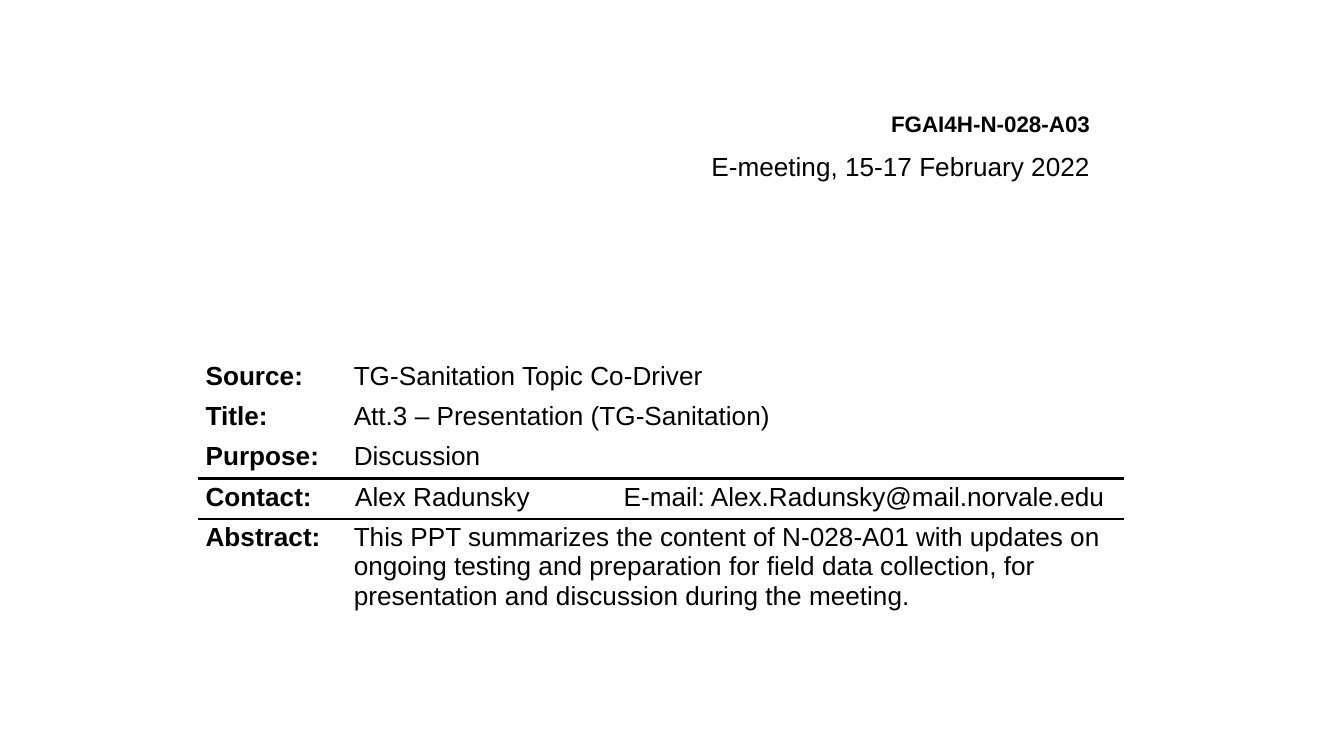
from lxml import etree
from pptx import Presentation
from pptx import util as u
from pptx.dml.color import RGBColor
from pptx.enum import text
from pptx.oxml.ns import qn

WIDTH = 10
HEIGHT = WIDTH * 9 / 16
BLACK = "000000"
FONT = "Arial"
PLAIN_TABLE_STYLE = "{2D5ABB26-0587-4C30-8999-92F81FD0307C}"

DETAILS = [
    ("Source:", "TG-Sanitation Topic Co-Driver"),
    ("Title:", "Att.3 – Presentation (TG-Sanitation)"),
    ("Purpose:", "Discussion"),
    ("Contact:", "Alex Radunsky", "E-mail: Alex.Radunsky@mail.norvale.edu"),
    ("Abstract:", "This PPT summarizes the content of N-028-A01 with updates on "
                  "ongoing testing and preparation for field data collection, "
                  "for presentation and discussion during the meeting."),
]
RULED_ROW = 3  # the contact row has a rule above and below


def color(value):
    return RGBColor.from_string(value)


def add_run(paragraph, words, size=14, bold=False):
    run = paragraph.add_run()
    run.text = words
    run.font.name = FONT
    run.font.size = u.Pt(size)
    run.font.bold = bold
    run.font.color.rgb = color(BLACK)


def add_rule(cell, side):
    """Draw a cell border; side is "T" or "B"."""
    properties = cell._tc.get_or_add_tcPr()
    line = etree.Element(qn(f"a:ln{side}"), w=str(u.Pt(1.5)))
    fill = etree.SubElement(line, qn("a:solidFill"))
    etree.SubElement(fill, qn("a:srgbClr"), val=BLACK)
    properties.insert(0, line)


def add_heading(slide, left, top, width, height, words, size, bold):
    box = slide.shapes.add_textbox(*map(u.Inches, (left, top, width, height)))
    frame = box.text_frame
    frame.word_wrap = False
    frame.auto_size = text.MSO_AUTO_SIZE.SHAPE_TO_FIT_TEXT
    paragraph = frame.paragraphs[0]
    paragraph.alignment = text.PP_ALIGN.RIGHT
    add_run(paragraph, words, size, bold)


def add_document_header(slide, right, top):
    """Document number and meeting date, flush right."""
    add_heading(slide, right - 1.69, top, 1.69, 0.3, "FGAI4H-N-028-A03", 12, True)
    add_heading(slide, right - 3.03, top + 0.3, 3.03, 0.34,
                "E-meeting, 15-17 February 2022", 14, False)


def add_details_table(slide, left, top, width, height):
    """Label column, then one merged or two separate value columns."""
    frame = slide.shapes.add_table(len(DETAILS), 3,
                                   *map(u.Inches, (left, top, width, height)))
    table = frame.table
    table.first_row = table.horz_banding = False
    table._tbl.tblPr.find(qn("a:tableStyleId")).text = PLAIN_TABLE_STYLE
    for column, share in zip(table.columns, (0.16, 0.29, 0.55)):
        column.width = u.Inches(width * share)

    # The abstract takes the height left by the single-line rows
    line_height = 0.3
    for row in table.rows:
        row.height = u.Inches(line_height)
    table.rows[len(DETAILS) - 1].height = u.Inches(
        height - line_height * (len(DETAILS) - 1))

    for index, values in enumerate(DETAILS):
        if len(values) == 2:
            table.cell(index, 1).merge(table.cell(index, 2))
        for column, words in enumerate(values):
            cell = table.cell(index, column)
            inset = 0.07 if len(values) == 3 and column else 0.06
            cell.margin_left = cell.margin_right = u.Inches(inset)
            cell.margin_top = cell.margin_bottom = u.Inches(0.03)
            add_run(cell.text_frame.paragraphs[0], words, bold=column == 0)
        for column in range(3):
            cell = table.cell(index, column)
            cell.fill.background()
            if index in (RULED_ROW - 1, RULED_ROW):
                add_rule(cell, "B")
            if index in (RULED_ROW, RULED_ROW + 1):
                add_rule(cell, "T")


def main():
    presentation = Presentation()
    presentation.slide_width = u.Inches(WIDTH)
    presentation.slide_height = u.Inches(HEIGHT)
    slide = presentation.slides.add_slide(presentation.slide_layouts[6])
    slide.background.fill.solid()
    slide.background.fill.fore_color.rgb = color("FFFFFF")

    add_document_header(slide, right=8.21, top=0.77)
    add_details_table(slide, 1.47, 2.66, 6.89, 1.96)
    presentation.save("out.pptx")


if __name__ == "__main__":
    main()
